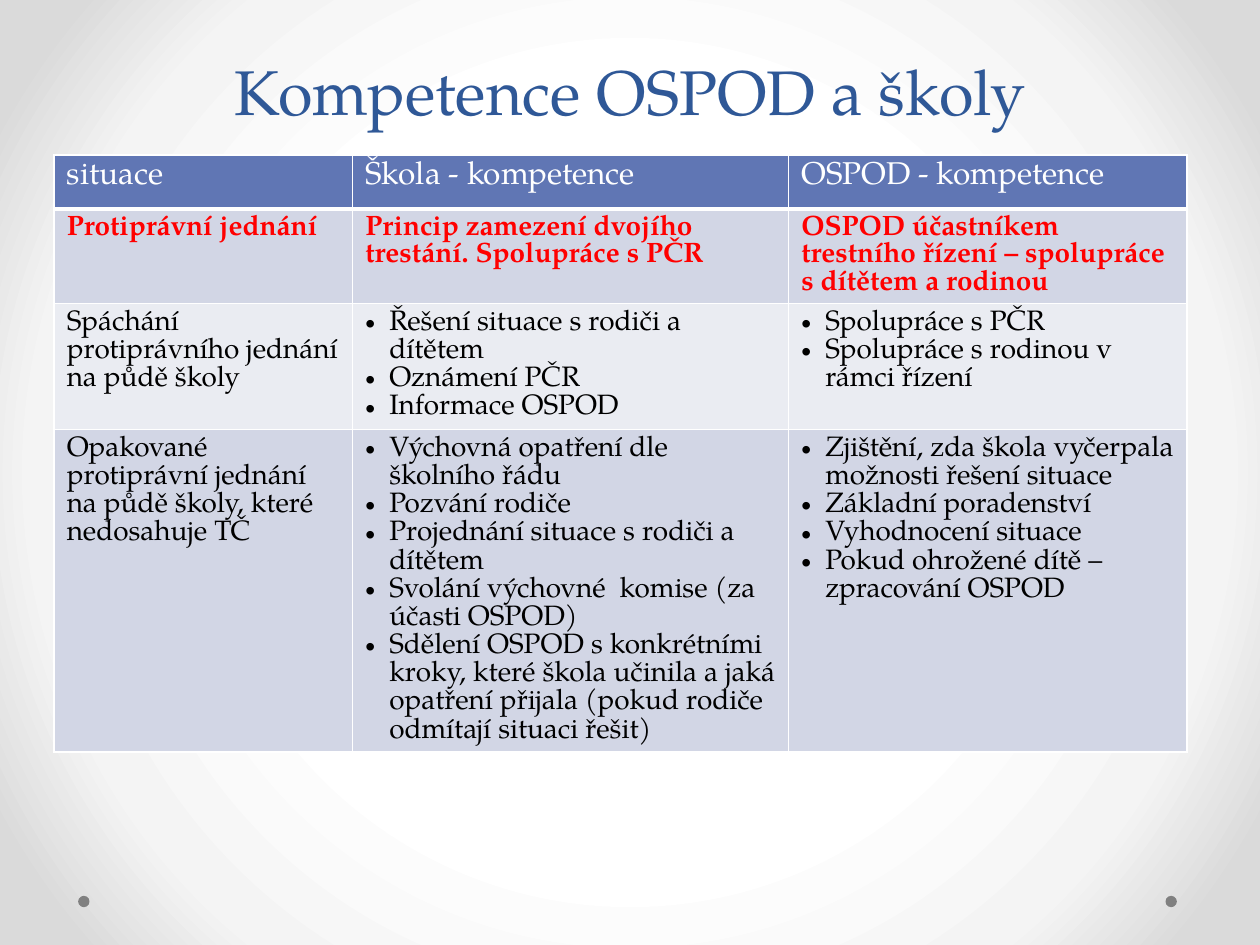
import dataclasses

import pptx
import pptx.dml.color
import pptx.enum.shapes
import pptx.enum.text
import pptx.oxml
import pptx.oxml.ns
import pptx.util
from pptx.util import Inches


@dataclasses.dataclass(frozen=True)
class Theme:
    font: str = "TeX Gyre Pagella"
    title_size: int = 36
    title_spacing: int = 58
    header_size: int = 18
    body_size: int = 16
    title: str = "2F5897"
    header_fill: str = "6076B4"
    band_fills: tuple = ("D2D6E5", "EAECF2")
    white: str = "FFFFFF"
    black: str = "000000"
    warning: str = "FF0000"
    dot: str = "808080"
    backdrop: tuple = ((50, "FFFFFF"), (76, "F4F4F4"), (92, "DADADA"))


HEADER = ["situace", "Škola - kompetence", "OSPOD - kompetence"]
# A list in a cell becomes bullets; a string is plain text
ROWS = [
    [
        "Protiprávní jednání",
        "Princip zamezení dvojího trestání. Spolupráce s PČR",
        "OSPOD účastníkem trestního řízení – spolupráce s dítětem a rodinou",
    ],
    [
        "Spáchání protiprávního jednání na půdě školy",
        ["Řešení situace s rodiči a dítětem", "Oznámení PČR", "Informace OSPOD"],
        ["Spolupráce s PČR", "Spolupráce s rodinou v rámci řízení"],
    ],
    [
        "Opakované protiprávní jednání na půdě školy, které nedosahuje TČ",
        [
            "Výchovná opatření dle školního řádu",
            "Pozvání rodiče",
            "Projednání situace s rodiči a dítětem",
            "Svolání výchovné  komise (za účasti OSPOD)",
            "Sdělení OSPOD s konkrétními kroky, které škola učinila a jaká "
            "opatření přijala (pokud rodiče odmítají situaci řešit)",
        ],
        [
            "Zjištění, zda škola vyčerpala možnosti řešení situace",
            "Základní poradenství",
            "Vyhodnocení situace",
            "Pokud ohrožené dítě – zpracování OSPOD",
        ],
    ],
]
COLUMN_WIDTHS = [2.37, 3.46, 3.16]
ROW_HEIGHTS = [0.43, 0.75, 1.0, 2.56]


def color(value):
    return pptx.dml.color.RGBColor.from_string(value)


def xml(text):
    """Parse a fragment whose root element has at least one attribute."""
    return pptx.oxml.parse_xml(text.replace(" ", f" {pptx.oxml.ns.nsdecls('a')} ", 1))


class SlideBuilder:
    def __init__(self, slide, theme):
        self.slide = slide
        self.theme = theme

    def style(self, para, size, value, bold=False):
        for span in para.runs:
            span.font.name = self.theme.font
            span.font.size = pptx.util.Pt(size)
            span.font.bold = bold
            span.font.color.rgb = color(value)

    def background(self):
        stops = "".join(
            f'<a:gs pos="{position * 1000}"><a:srgbClr val="{value}"/></a:gs>'
            for position, value in self.theme.backdrop
        )
        fill = xml(
            f'<a:gradFill rotWithShape="1"><a:gsLst>{stops}</a:gsLst><a:path path="circle">'
            '<a:fillToRect l="50000" t="50000" r="50000" b="50000"/></a:path></a:gradFill>'
        )
        self.slide.background.fill.solid()
        properties = self.slide.element.find(".//" + pptx.oxml.ns.qn("p:bgPr"))
        properties.replace(properties[0], fill)

    def dot(self, left, top, size):
        shape = self.slide.shapes.add_shape(
            pptx.enum.shapes.MSO_SHAPE.OVAL,
            Inches(left), Inches(top), Inches(size), Inches(size),
        )
        shape.shadow.inherit = False
        shape.fill.solid()
        shape.fill.fore_color.rgb = color(self.theme.dot)
        shape.line.fill.background()

    def title(self, text, left, top, width, height):
        box = self.slide.shapes.title
        box.left, box.top = Inches(left), Inches(top)
        box.width, box.height = Inches(width), Inches(height)
        frame = box.text_frame
        frame.text = text
        frame.vertical_anchor = pptx.enum.text.MSO_ANCHOR.BOTTOM
        para = frame.paragraphs[0]
        para.alignment = pptx.enum.text.PP_ALIGN.CENTER
        para.line_spacing = pptx.util.Pt(self.theme.title_spacing)
        self.style(para, self.theme.title_size, self.theme.title)

    def bullet(self, para):
        properties = para._p.get_or_add_pPr()
        indent = Inches(0.19)
        properties.set("marL", str(indent))
        properties.set("indent", str(-indent))
        properties.append(xml('<a:buFont typeface="Arial"/>'))
        properties.append(xml('<a:buChar char="•"/>'))

    def borders(self, cell, bottom):
        properties = cell._tc.get_or_add_tcPr()
        for index, side in enumerate("LRTB"):
            width = pptx.util.Pt(bottom if side == "B" else 1)
            properties.insert(index, xml(
                f'<a:ln{side} w="{width}"><a:solidFill>'
                f'<a:srgbClr val="{self.theme.white}"/></a:solidFill></a:ln{side}>'
            ))

    def cell(self, cell, content, fill, size, value, bold, bottom):
        bulleted = isinstance(content, list)
        cell.text_frame.text = "\n".join(content) if bulleted else content
        for para in cell.text_frame.paragraphs:
            self.style(para, size, value, bold)
            if bulleted:
                self.bullet(para)
        cell.fill.solid()
        cell.fill.fore_color.rgb = color(fill)
        self.borders(cell, bottom)

    def table(self, rows, left, top, widths, heights):
        theme = self.theme
        table = self.slide.shapes.add_table(
            len(rows), len(widths), Inches(left), Inches(top),
            Inches(sum(widths)), Inches(sum(heights)),
        ).table
        for column, width in zip(table.columns, widths):
            column.width = Inches(width)
        for number, (row, height) in enumerate(zip(rows, heights)):
            table.rows[number].height = Inches(height)
            if number == 0:
                look = (theme.header_fill, theme.header_size, theme.white, False, 3)
            else:
                warning = number == 1
                value = theme.warning if warning else theme.black
                look = (theme.band_fills[(number - 1) % 2], theme.body_size, value, warning, 1)
            for position, content in enumerate(row):
                self.cell(table.cell(number, position), content, *look)


def main():
    deck = pptx.Presentation()
    deck.slide_width, deck.slide_height = Inches(10), Inches(7.5)
    page = SlideBuilder(deck.slides.add_slide(deck.slide_layouts[5]), Theme())

    # Backdrop with a dot in each lower corner
    page.background()
    for left in (9.25, 0.62):
        page.dot(left, 7.11, 0.09)

    # Heading and table of competences
    page.title("Kompetence OSPOD a školy", 0.5, 0, 9, 1.07)
    page.table([HEADER] + ROWS, 0.43, 1.23, COLUMN_WIDTHS, ROW_HEIGHTS)

    deck.save("out.pptx")


if __name__ == "__main__":
    main()
